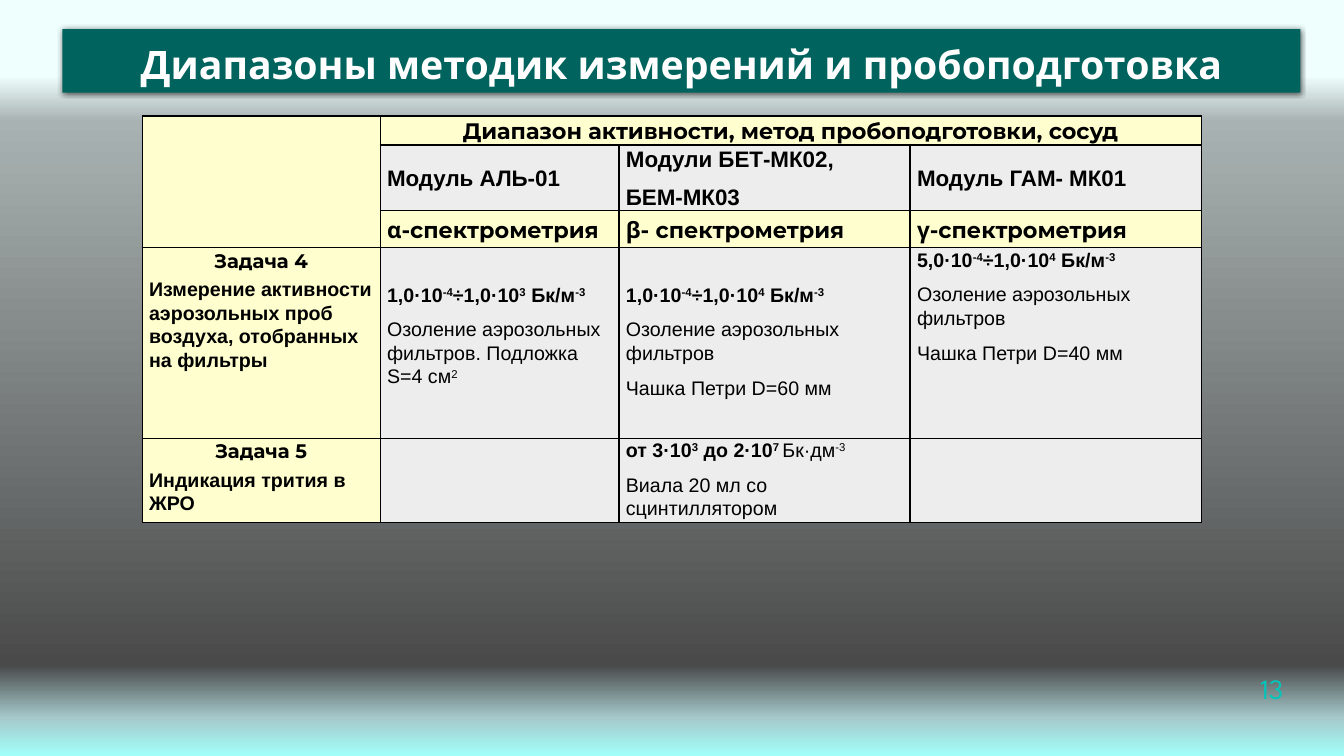
from lxml.etree import SubElement
from pptx import Presentation
from pptx.dml.color import RGBColor
from pptx.enum.shapes import MSO_SHAPE as Shape
from pptx.enum.text import MSO_ANCHOR as Anchor, PP_ALIGN as Align
from pptx.oxml.ns import qn
from pptx.util import Pt

COLORS = {
    "banner": "00635D", "banner_text": "FEFEFE", "number": "00C6BB",
    "heading": "FEFECE", "data": "EDEDED", "ink": "000000",
}
BACKGROUND_STOPS = [(10, "EFFFFE"), (16, "A9B2B2"), (88, "4A4A4A"),
                    (95, "A6CACC"), (100, "A1FFFA")]
COLUMN_WIDTHS = [170, 170.6, 208, 208]
ROW_HEIGHTS = [20.2, 46.8, 26.6, 136, 60]
MODULES = [["Модуль АЛЬ-01"], ["Модули БЕТ-МК02,", "БЕМ-МК03"], ["Модуль ГАМ- МК01"]]
METHODS = ["α-спектрометрия", "β- спектрометрия", "γ-спектрометрия"]
TASKS = [
    ("Задача 4", "Измерение активности аэрозольных проб воздуха, отобранных на фильтры"),
    ("Задача 5", "Индикация трития в ЖРО"),
]
RANGES = [
    (3, 1, 25, [[("1,0·10^-4^÷1,0·10^3^ Бк/м^-3", True)],
                [("Озоление аэрозольных фильтров. Подложка S=4 см^2", False)]]),
    (3, 2, 25, [[("1,0·10^-4^÷1,0·10^4^ Бк/м^-3", True)],
                [("Озоление аэрозольных фильтров", False)],
                [("Чашка Петри D=60 мм", False)]]),
    (3, 3, 0, [[("5,0·10^-4^÷1,0·10^4^ Бк/м^-3", True)],
               [("Озоление аэрозольных фильтров", False)],
               [("Чашка Петри D=40 мм", False)]]),
    (4, 2, 0, [[("от 3·10^3^ до 2·10^7 ", True), ("Бк·дм^-3", False)],
               [("Виала 20 мл со сцинтиллятором", False)]]),
]


def rgb(name):
    """Return the named colour."""
    return RGBColor.from_string(COLORS[name])


def add_run(paragraph, text, font, size, color="ink", bold=False, raised=False):
    """Add one formatted run, raised when it is an exponent."""
    run = paragraph.add_run()
    run.text = text
    run.font.name, run.font.size, run.font.bold = font, Pt(size), bold
    run.font.color.rgb = rgb(color)
    if raised:
        run.font._element.set("baseline", "30000")


def add_line(frame, first, pieces, font, size, align=Align.LEFT, after=8):
    """Write one table paragraph; carets enclose exponents."""
    paragraph = frame.paragraphs[0] if first else frame.add_paragraph()
    paragraph.alignment, paragraph.line_spacing = align, 1.07
    paragraph.space_after = Pt(after)
    for text, bold in pieces:
        for position, part in enumerate(text.split("^")):
            if part:
                add_run(paragraph, part, font, size, bold=bold, raised=position % 2 == 1)


def paint_background(slide):
    """Fill the background with the vertical gradient."""
    fill = slide.background.fill
    fill.gradient()
    fill.gradient_angle = 270
    stops = fill.gradient_stops._gsLst
    for old_stop in list(stops):
        stops.remove(old_stop)
    for percent, color in BACKGROUND_STOPS:
        stop = SubElement(stops, qn("a:gs"), pos=str(percent * 1000))
        SubElement(stop, qn("a:srgbClr"), val=color)


def add_banner(slide, title):
    """Add the title bar with its soft shadow."""
    banner = slide.shapes.add_shape(Shape.RECTANGLE, Pt(44.6), Pt(20.9), Pt(884.2), Pt(45.4))
    banner.fill.solid()
    banner.fill.fore_color.rgb = rgb("banner")
    banner.line.fill.background()
    banner.shadow.inherit = False
    effects = banner._element.spPr.find(qn("a:effectLst"))
    shadow = SubElement(effects, qn("a:outerShdw"), blurRad=str(Pt(4)), dist="0",
                        dir=str(240 * 60000), rotWithShape="0")
    tint = SubElement(shadow, qn("a:srgbClr"), val=COLORS["ink"])
    SubElement(tint, qn("a:alpha"), val="60000")
    frame = banner.text_frame
    frame.word_wrap, frame.vertical_anchor = True, Anchor.BOTTOM
    frame.paragraphs[0].alignment = Align.CENTER
    add_run(frame.paragraphs[0], title, "League Spartan", 28, "banner_text", True)


def add_slide_number(slide, number):
    """Add the slide number at the lower right."""
    frame = slide.shapes.add_textbox(Pt(840.2), Pt(465.8), Pt(83.5), Pt(38.9)).text_frame
    frame.word_wrap, frame.vertical_anchor = True, Anchor.BOTTOM
    frame.margin_bottom = Pt(0.7)
    frame.paragraphs[0].alignment = Align.RIGHT
    add_run(frame.paragraphs[0], number, "League Spartan", 20, "number")


def style_cell(cell, color):
    """Give a cell its borders, margins and fill."""
    properties = cell._tc.get_or_add_tcPr()
    for side in ("a:lnL", "a:lnR", "a:lnT", "a:lnB"):
        border = SubElement(properties, qn(side), w=str(Pt(1)))
        SubElement(SubElement(border, qn("a:solidFill")), qn("a:srgbClr"), val=COLORS["ink"])
    cell.margin_left = cell.margin_right = Pt(5)
    cell.margin_top = cell.margin_bottom = Pt(0)
    cell.fill.solid()
    cell.fill.fore_color.rgb = rgb(color)


def add_grid(slide):
    """Add the empty styled table with its merged headings."""
    grid = slide.shapes.add_table(len(ROW_HEIGHTS), len(COLUMN_WIDTHS), Pt(101.5), Pt(82.8),
                                  Pt(sum(COLUMN_WIDTHS)), Pt(sum(ROW_HEIGHTS))).table
    grid.first_row = grid.horz_banding = False
    for column, width in zip(grid.columns, COLUMN_WIDTHS):
        column.width = Pt(width)
    for row_index, (row, height) in enumerate(zip(grid.rows, ROW_HEIGHTS)):
        row.height = Pt(height)
        for column_index, cell in enumerate(row.cells):
            heading = column_index == 0 or row_index in (0, 2)
            style_cell(cell, "heading" if heading else "data")
            for paragraph in cell.text_frame.paragraphs:
                paragraph.font.size = Pt(14)
    grid.cell(0, 0).merge(grid.cell(2, 0))
    grid.cell(0, 1).merge(grid.cell(0, 3))
    return grid


def fill_headings(grid):
    """Write the column headings and the task descriptions."""
    heading = "Диапазон активности, метод пробоподготовки, сосуд"
    add_line(grid.cell(0, 1).text_frame, True, [(heading, True)], "Montserrat", 16, Align.CENTER, 6)
    for column, (modules, method) in enumerate(zip(MODULES, METHODS), 1):
        module_cell, method_cell = grid.cell(1, column), grid.cell(2, column)
        module_cell.vertical_anchor = method_cell.vertical_anchor = Anchor.MIDDLE
        for index, module in enumerate(modules):
            add_line(module_cell.text_frame, index == 0, [(module, True)], "Arial", 16)
        add_line(method_cell.text_frame, True, [(method, True)], "Montserrat", 16)
    for row, (task, description) in enumerate(TASKS, 3):
        frame = grid.cell(row, 0).text_frame
        add_line(frame, True, [(task, True)], "Montserrat", 14, Align.CENTER, 3)
        add_line(frame, False, [(description, True)], "Arial", 14)


def fill_ranges(grid):
    """Write the activity ranges and sample preparation."""
    for row, column, top, lines in RANGES:
        cell = grid.cell(row, column)
        cell.margin_top = Pt(top)
        for index, pieces in enumerate(lines):
            add_line(cell.text_frame, index == 0, pieces, "Arial", 14)


def main():
    """Build and save the slide."""
    deck = Presentation()
    deck.slide_width, deck.slide_height = Pt(960), Pt(540)
    slide = deck.slides.add_slide(deck.slide_layouts[6])
    paint_background(slide)
    grid = add_grid(slide)
    fill_headings(grid)
    fill_ranges(grid)
    add_banner(slide, "Диапазоны методик измерений и пробоподготовка")
    add_slide_number(slide, "13")
    deck.save("out.pptx")


if __name__ == "__main__":
    main()
